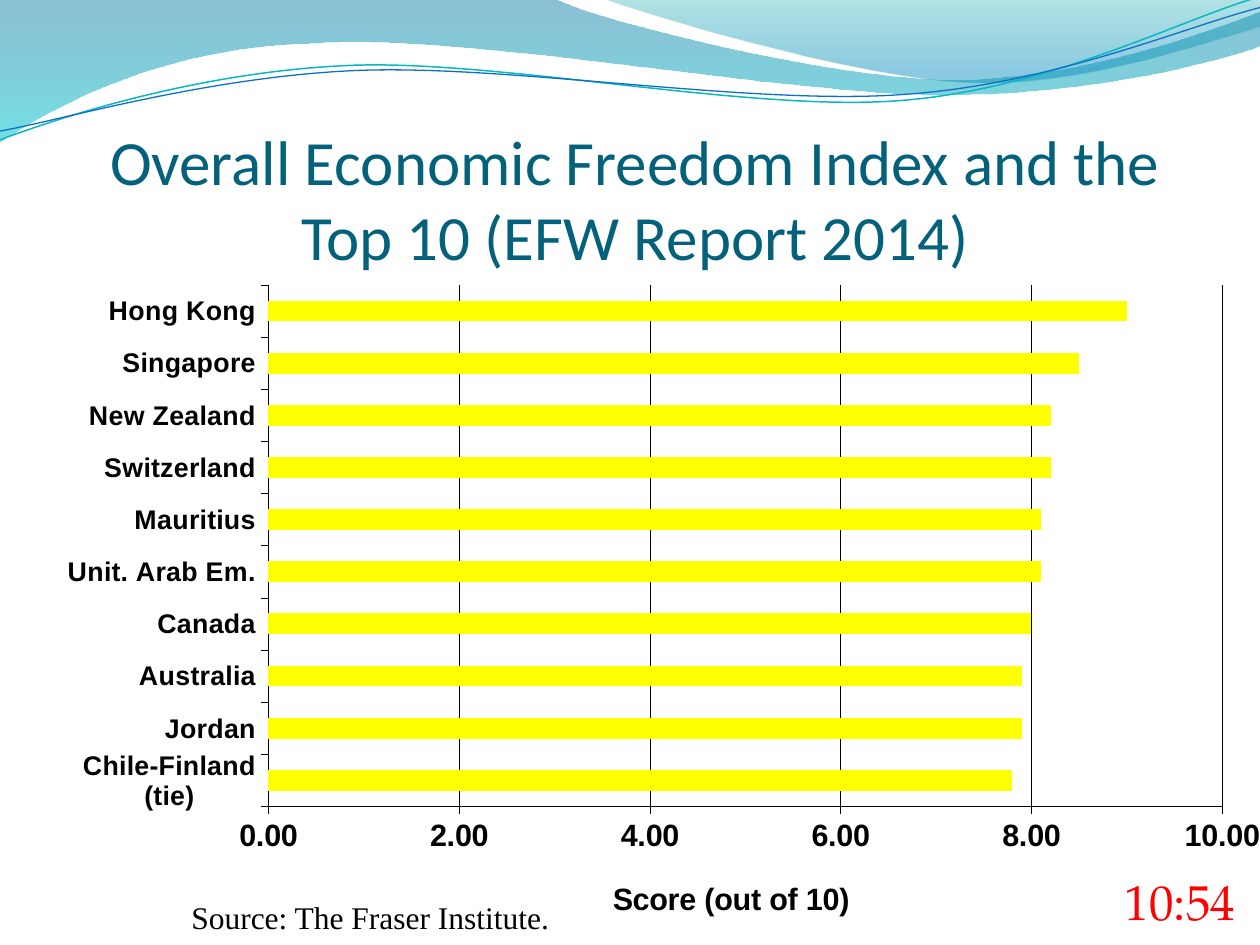
from lxml import etree
from pptx import Presentation
from pptx.chart.data import CategoryChartData
from pptx.dml.color import RGBColor
from pptx.enum.chart import XL_CHART_TYPE, XL_TICK_LABEL_POSITION, XL_TICK_MARK
from pptx.enum.text import MSO_ANCHOR, MSO_AUTO_SIZE, PP_ALIGN
from pptx.oxml.ns import qn
from pptx.util import Inches, Pt

BAR = XL_CHART_TYPE.BAR_CLUSTERED
LABELS_LOW = XL_TICK_LABEL_POSITION.LOW
TICK_OUT, TICK_NONE = XL_TICK_MARK.OUTSIDE, XL_TICK_MARK.NONE
BOTTOM, CENTER = MSO_ANCHOR.BOTTOM, PP_ALIGN.CENTER
NO_AUTOFIT = MSO_AUTO_SIZE.NONE
TITLE_ONLY = 5

SCORES = {
    "Hong Kong": 9.0, "Singapore": 8.5, "New Zealand": 8.2,
    "Switzerland": 8.2, "Mauritius": 8.1, "Unit. Arab Em.": 8.1,
    "Canada": 8.0, "Australia": 7.9, "Jordan": 7.9,
    "Chile-Finland (tie)": 7.8,
}

# Each path is a start point followed by line ends (2 numbers)
# or cubic curves (6 numbers), in inches.
LEFT_WAVE = [
    (0, 0), (4.4, -0.01), (4.76, 0.17, 6.64, 0.63, 7.58, 0.63),
    (8.53, 0.63, 9.58, 0.26, 10, 0.09), (10.01, 0.36),
    (9.83, 0.44, 8.7, 0.76, 7.46, 0.75), (6.22, 0.75, 3.82, 0.28, 2.57, 0.34),
    (1.29, 0.36, 0.46, 0.83, -0.01, 1.13),
]
RIGHT_WAVE = [
    (4.79, -0.01), (5.09, 0.11, 6.82, 0.62, 7.69, 0.65),
    (8.56, 0.69, 9.61, 0.32, 10, 0.21), (10, 0),
]
TEAL_LINE = [
    (0, 1.11), (0.48, 0.93, 1.58, 0.57, 2.77, 0.52),
    (3.95, 0.47, 5.93, 0.89, 7.13, 0.8), (8.33, 0.71, 9.38, 0.15, 9.98, -0.02),
]
BLUE_LINE = [
    (0, 1.04), (0.47, 0.96, 1.64, 0.61, 2.83, 0.56),
    (4.03, 0.51, 5.97, 0.84, 7.17, 0.75), (8.36, 0.67, 9.41, 0.21, 10, 0.06),
]


def rgb(color):
    return RGBColor.from_string(color)


def style_font(font, name, size, color, bold=False):
    font.name, font.size, font.bold = name, Pt(size), bold
    font.color.rgb = rgb(color)


def place(sp, box):
    sp.left, sp.top, sp.width, sp.height = map(Inches, box)


def add_path(s, path, close):
    """Freeform whose runs of three points become cubic curves."""
    start, *rest = [(Inches(part[i]), Inches(part[i + 1]))
                    for part in path for i in range(0, len(part), 2)]
    builder = s.shapes.build_freeform(*start)
    builder.add_line_segments(rest, close=close)
    sp = builder.convert_to_shape()
    sp.shadow.inherit = False
    outline = sp.element.spPr.find(".//" + qn("a:path"))
    lines = iter(outline.findall(qn("a:lnTo")))
    for part in path[1:]:
        segment = next(lines)
        if len(part) == 6:
            curve = etree.Element(qn("a:cubicBezTo"))
            segment.addprevious(curve)
            for line in (segment, next(lines), next(lines)):
                curve.append(line[0])
                outline.remove(line)
    return sp


def add_wave(s, path, stops):
    """Filled wave; stops are (position, colour, opacity percent)."""
    sp = add_path(s, path, True)
    sp.line.fill.background()
    sp.fill.gradient()
    sp.fill.gradient_angle = 270
    for stop, (position, color, _) in zip(sp.fill.gradient_stops, stops):
        stop.position = position
        stop.color.rgb = rgb(color)
    for clr, (_, _, opacity) in zip(sp.element.spPr.iter(qn("a:srgbClr")), stops):
        etree.SubElement(clr, qn("a:alpha"), val=str(opacity * 1000))


def add_wave_line(s, path, color, width):
    sp = add_path(s, path, False)
    sp.fill.background()
    sp.line.color.rgb = rgb(color)
    sp.line.width = Pt(width)


def add_header(s):
    add_wave(s, LEFT_WAVE, [(0, "0074A1", 45), (1, "00C6CF", 55)])
    add_wave(s, RIGHT_WAVE, [(0, "00A1A9", 30), (0.8, "008BBF", 45)])
    add_wave_line(s, TEAL_LINE, "0AB8BF", 0.85)
    add_wave_line(s, BLUE_LINE, "0F6FC6", 0.75)


def add_title(s, box, text):
    title = s.shapes.title
    place(title, box)
    title.element.getparent().append(title.element)  # in front of the waves
    tf = title.text_frame
    tf.auto_size, tf.vertical_anchor, tf.word_wrap = NO_AUTOFIT, BOTTOM, True
    tf.margin_left = tf.margin_right = tf.margin_bottom = 0
    p = tf.paragraphs[0]
    p.alignment = CENTER
    r = p.add_run()
    r.text = text
    style_font(r.font, "Calibri", 36, "04617B")


def add_label(s, box, text, font, size, color):
    tf = s.shapes.add_textbox(*map(Inches, box)).text_frame
    tf.word_wrap = True
    r = tf.paragraphs[0].add_run()
    r.text = text
    style_font(r.font, font, size, color)


def set_layout(parent, index, **values):
    """Manual chart layout, placed at the given child index."""
    for old in parent.findall(qn("c:layout")):
        parent.remove(old)
    layout = etree.Element(qn("c:layout"))
    parent.insert(index, layout)
    manual = etree.SubElement(layout, qn("c:manualLayout"))
    for tag, value in values.items():
        etree.SubElement(manual, qn(f"c:{tag}"), val=str(value))


def style_hairline(line):
    line.color.rgb = rgb("000000")
    line.width = Pt(0.28)


def style_axis(axis, size):
    style_font(axis.tick_labels.font, "Arial", size, "000000", True)
    axis.major_tick_mark, axis.minor_tick_mark = TICK_OUT, TICK_NONE
    style_hairline(axis.format.line)


def add_score_chart(s, box):
    data = CategoryChartData(number_format="0.00")
    data.categories = list(SCORES)
    data.add_series("Series 1", list(SCORES.values()))
    chart = s.shapes.add_chart(BAR, *map(Inches, box), data).chart
    chart.has_legend = chart.has_title = False
    style_font(chart.font, "Arial", 19.8, "000000", True)

    plot = chart.plots[0]
    plot.gap_width, plot.vary_by_categories = 150, False
    fill = plot.series[0].format.fill
    fill.solid()
    fill.fore_color.rgb = rgb("FFFF00")

    countries, scores = chart.category_axis, chart.value_axis
    style_axis(countries, 15.4)
    countries.reverse_order = True
    countries.tick_label_position = LABELS_LOW

    style_axis(scores, 17.6)
    scores.minimum_scale, scores.maximum_scale, scores.major_unit = 0, 10, 2
    scores.tick_labels.number_format = "0.00"
    scores.tick_labels.number_format_is_linked = False
    scores.has_major_gridlines = True
    style_hairline(scores.major_gridlines.format.line)
    r = scores.axis_title.text_frame.paragraphs[0].add_run()
    r.text = "Score (out of 10)"
    style_font(r.font, "Arial", 17.6, "000000", True)

    plot_area = chart.element.find(".//" + qn("c:plotArea"))
    # The score axis belongs below the last country.
    plot_area.find(qn("c:valAx")).find(qn("c:crosses")).set("val", "max")
    set_layout(scores.axis_title.element, 1, xMode="edge", yMode="edge",
               x=0.466, y=0.9)
    set_layout(plot_area, 0, layoutTarget="inner", xMode="edge", yMode="edge",
               x=0.185, y=0.021, w=0.791, h=0.778)


def main():
    prs = Presentation()
    prs.slide_width, prs.slide_height = Inches(10), Inches(7.5)
    s = prs.slides.add_slide(prs.slide_layouts[TITLE_ONLY])
    add_header(s)
    add_title(s, (0.5, 0.92, 9.08, 1.25),
              "Overall Economic Freedom Index and the Top 10 (EFW Report 2014)")
    add_label(s, (1.42, 7.08, 3.05, 0.4), "Source: The Fraser Institute.",
              "Times New Roman", 18, "000000")
    add_score_chart(s, (0.36, 2.15, 9.64, 5.32))
    add_label(s, (8.83, 6.87, 1.17, 0.57), "10:54",
              "TeX Gyre Pagella", 28, "FF0000")
    prs.save("out.pptx")


if __name__ == "__main__":
    main()
